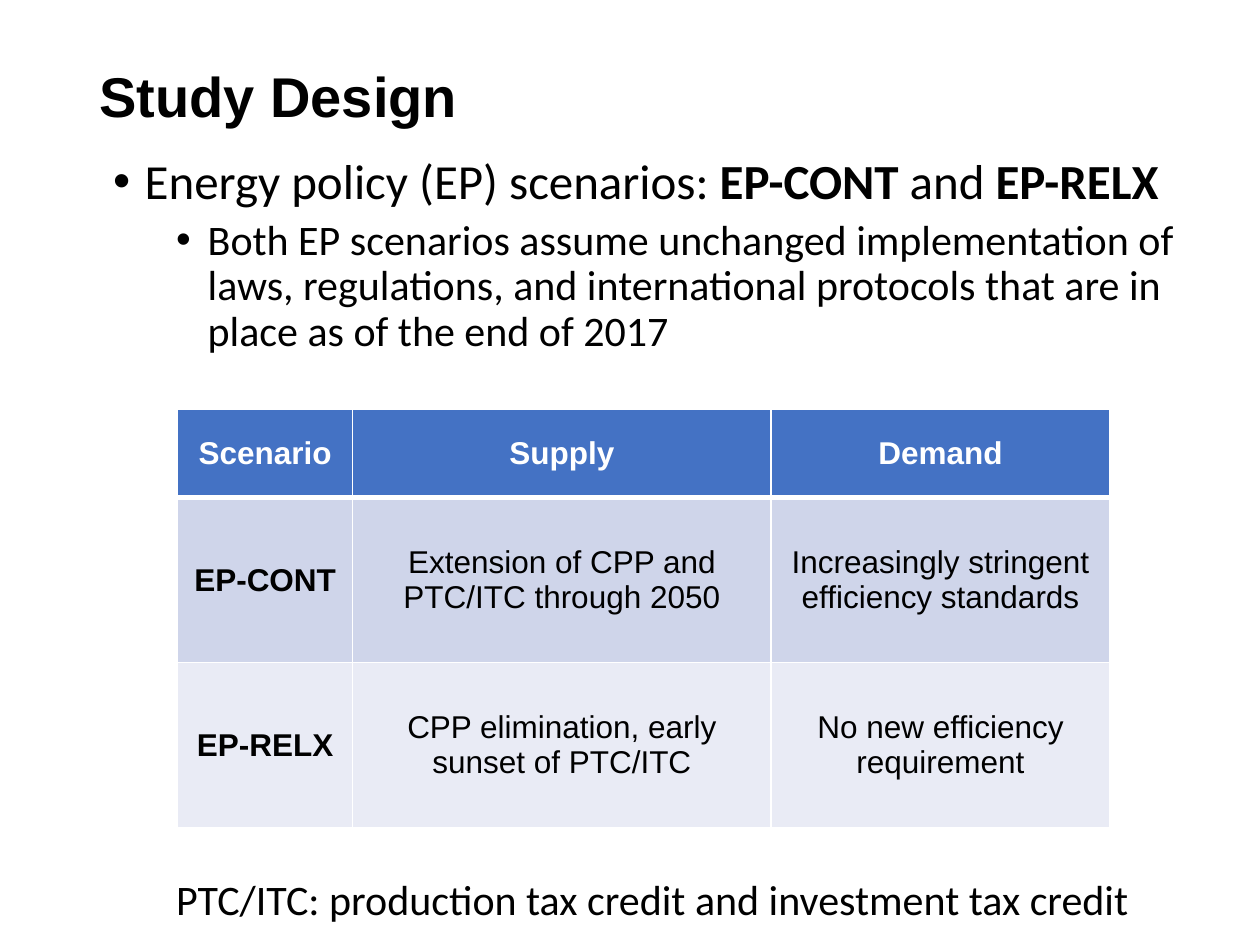
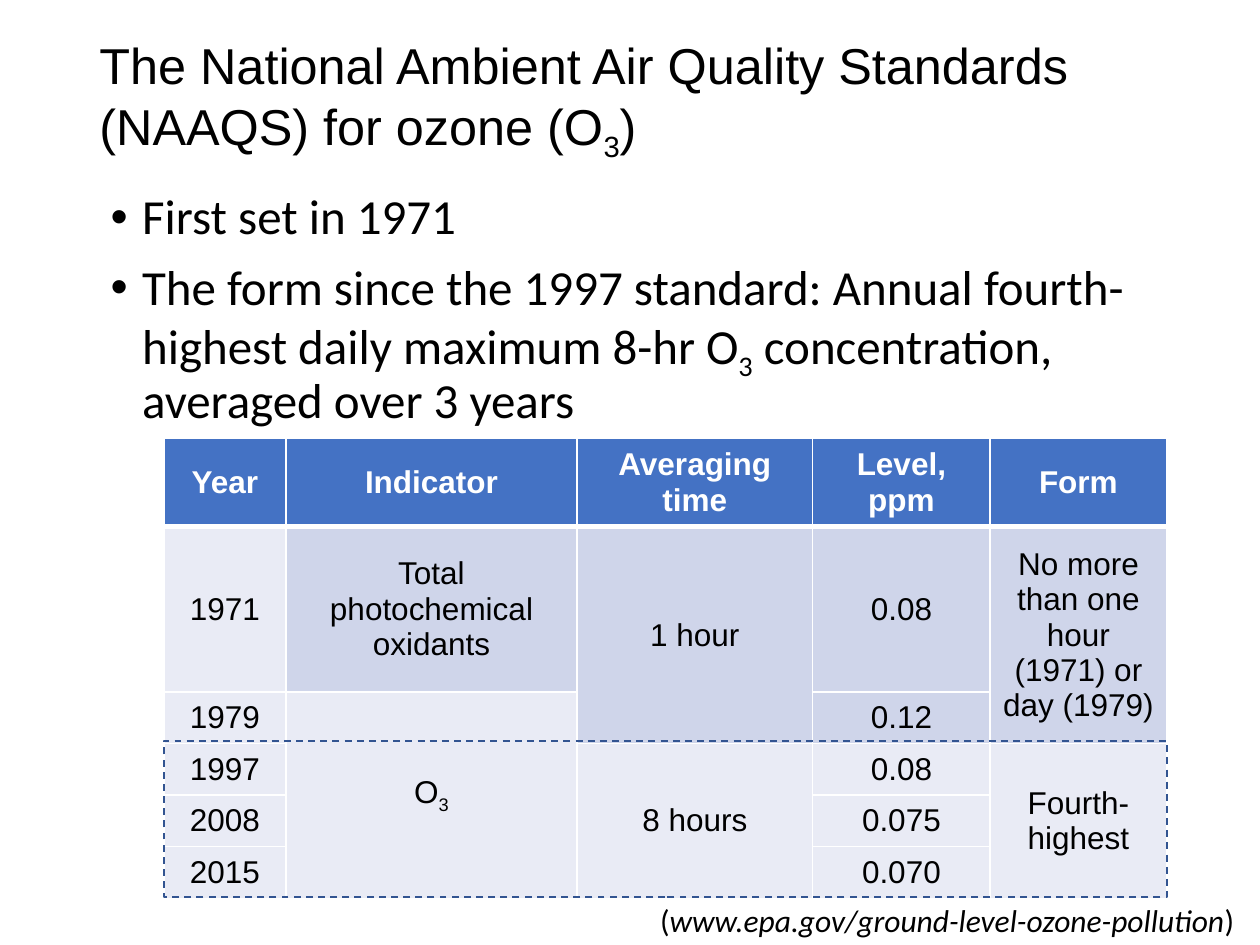
"""Builds two slides on energy policy scenarios and ozone standards."""
import dataclasses

import lxml.etree
import pptx
import pptx.dml.color
import pptx.enum.dml
import pptx.enum.shapes
import pptx.enum.text
import pptx.oxml.ns
import pptx.util

Inches = pptx.util.Inches
Pt = pptx.util.Pt
Align = pptx.enum.text.PP_ALIGN
Anchor = pptx.enum.text.MSO_ANCHOR
qn = pptx.oxml.ns.qn


@dataclasses.dataclass(frozen=True)
class Theme:
    """Colours, fonts and type sizes of both slides."""

    ink: str = "000000"
    white: str = "FFFFFF"
    head: str = "4472C4"
    dark: str = "CFD5EA"
    light: str = "E9EBF5"
    frame: str = "325491"
    sans: str = "Arial"
    text: str = "Calibri"
    title: float = 32
    long: float = 28.8
    body: float = 28
    sub: float = 24
    small: float = 18


LOOK = Theme()
TITLE = (0.69, 0.4, 8.62, 0.78)


def color(code):
    """Turn a hex code into a colour."""
    return pptx.dml.color.RGBColor.from_string(code)


def write(para, parts, face, size, ink=LOOK.ink, bold=False):
    """Fill a paragraph from a string or (text, mark) parts; marks are b, i and s."""
    if isinstance(parts, str):
        parts = [(parts, "")]
    for text, mark in parts:
        run = para.add_run()
        run.text = text
        font = run.font
        font.name, font.size = face, Pt(size)
        font.color.rgb = color(ink)
        font.bold = bold or mark == "b"
        font.italic = mark == "i"
        if mark == "s":
            run._r.get_or_add_rPr().set("baseline", "-25000")


def frame(slide, box):
    """Add a wrapping text box and return its text frame."""
    area = slide.shapes.add_textbox(*map(Inches, box)).text_frame
    area.word_wrap = True
    return area


def title(slide, parts, size, bold=False):
    """Add the slide title."""
    area = frame(slide, TITLE)
    area.vertical_anchor = Anchor.MIDDLE
    para = area.paragraphs[0]
    para.line_spacing = 0.9
    write(para, parts, LOOK.sans, size, bold=bold)


def bullets(slide, box, items):
    """Add a bullet list of (level, parts) items."""
    area = frame(slide, box)
    for rank, (level, parts) in enumerate(items):
        para = area.add_paragraph() if rank else area.paragraphs[0]
        para.level = level
        props = para._p.get_or_add_pPr()
        props.set("marL", str(Inches(0.25 + 0.5 * level)))
        props.set("indent", str(Inches(-0.25)))
        lxml.etree.SubElement(props, qn("a:buFont")).set("typeface", LOOK.sans)
        lxml.etree.SubElement(props, qn("a:buChar")).set("char", "•")
        para.line_spacing = 0.9
        if rank:
            para.space_before = Pt(5 if level else 10)
        write(para, parts, LOOK.text, LOOK.sub if level else LOOK.body)


def note(slide, box, parts, size):
    """Add a caption below the table."""
    write(frame(slide, box).paragraphs[0], parts, LOOK.text, size)


def edges(cell, top, base):
    """Draw white cell borders with the given top and bottom widths."""
    props = cell._tc.get_or_add_tcPr()
    widths = {"a:lnL": 1, "a:lnR": 1, "a:lnT": top, "a:lnB": base}
    for rank, (tag, width) in enumerate(widths.items()):
        line = lxml.etree.Element(qn(tag), w=str(Pt(width)))
        fill = lxml.etree.SubElement(line, qn("a:solidFill"))
        lxml.etree.SubElement(fill, qn("a:srgbClr")).set("val", LOOK.white)
        props.insert(rank, line)


def grid(slide, box, cols, rows, data, shade, spans=(), strong=False):
    """Add a table; shade(row, col) picks the fill, spans are (row, col, last row)."""
    table = slide.shapes.add_table(len(rows), len(cols), *map(Inches, box)).table
    for col, width in zip(table.columns, cols):
        col.width = Inches(width)
    for row, height in zip(table.rows, rows):
        row.height = Inches(height)
    for r, line in enumerate(data):
        for c, parts in enumerate(line):
            cell = table.cell(r, c)
            cell.fill.solid()
            cell.fill.fore_color.rgb = color(LOOK.head if r == 0 else shade(r, c))
            cell.vertical_anchor = Anchor.MIDDLE
            edges(cell, 3 if r == 1 else 1, 3 if r == 0 else 1)
            if parts:
                para = cell.text_frame.paragraphs[0]
                para.alignment = Align.CENTER
                write(para, parts, LOOK.sans, LOOK.small,
                      LOOK.ink if r else LOOK.white, r == 0 or (strong and c == 0))
    for first, col, last in spans:
        table.cell(first, col).merge(table.cell(last, col))


def dashes(slide, box):
    """Add a dashed outline around the current form of the standard."""
    kind = pptx.enum.shapes.MSO_SHAPE.RECTANGLE
    shape = slide.shapes.add_shape(kind, *map(Inches, box))
    shape.shadow.inherit = False
    shape.fill.background()
    shape.line.color.rgb = color(LOOK.frame)
    shape.line.width = Pt(1)
    shape.line.dash_style = pptx.enum.dml.MSO_LINE.DASH


def design(slide):
    """Build the study design slide."""
    bullets(slide, (0.8, 1.2, 8.62, 6.1), [
        (0, [("Energy policy (EP) scenarios: ", ""), ("EP-CONT", "b"),
             (" and ", ""), ("EP-RELX", "b")]),
        (1, "Both EP scenarios assume unchanged implementation of laws, "
            "regulations, and international protocols that are in place "
            "as of the end of 2017"),
    ])
    title(slide, "Study Design", LOOK.title, bold=True)
    data = [
        ("Scenario", "Supply", "Demand"),
        ("EP-CONT", "Extension of CPP and PTC/ITC through 2050",
         "Increasingly stringent efficiency standards"),
        ("EP-RELX", "CPP elimination, early sunset of PTC/ITC",
         "No new efficiency requirement"),
    ]
    grid(slide, (1.41, 3.25, 7.4, 3.32), (1.39, 3.32, 2.69), (0.7, 1.31, 1.31),
         data, lambda r, c: LOOK.dark if r == 1 else LOOK.light, strong=True)
    note(slide, (1.3, 6.88, 8.01, 0.5),
         "PTC/ITC: production tax credit and investment tax credit", LOOK.sub)


def ozone(slide):
    """Build the ozone standards slide."""
    bullets(slide, (0.78, 1.48, 8.48, 4.67), [
        (0, "First set in 1971"),
        (0, [("The form since the 1997 standard: Annual fourth-highest daily "
              "maximum 8-hr O", ""), ("3", "s"),
             (" concentration, averaged over 3 years", "")]),
    ])
    title(slide, [("The National Ambient Air Quality Standards (NAAQS) for "
                   "ozone (O", ""), ("3", "s"), (")", "")], LOOK.long)
    data = [
        ("Year", "Indicator", "Averaging time", "Level, ppm", "Form"),
        ("1971", "Total photochemical oxidants", "1 hour", "0.08",
         "No more than one hour (1971) or day (1979)"),
        ("1979", [("O", ""), ("3", "s")], "", "0.12", ""),
        ("1997", "", "8 hours", "0.08", "Fourth-highest"),
        ("2008", "", "", "0.075", ""),
        ("2015", "", "", "0.070", ""),
    ]

    def shade(r, c):
        """Darken the hourly standards beside the year column."""
        return LOOK.dark if c and (r == 1 or (r == 2 and c > 1)) else LOOK.light

    left, top, width, height = box = (1.3, 3.48, 7.96, 3.64)
    grid(slide, box, (0.97, 2.31, 1.87, 1.41, 1.4), (0.7, 1.31) + (0.41,) * 4,
         data, shade, [(1, 2, 2), (1, 4, 2), (2, 1, 5), (3, 2, 5), (3, 4, 5)])
    dashes(slide, (left, top + 2.4, width, height - 2.4))
    note(slide, (5.14, 7.1, 4.86, 0.4),
         [("(", ""), ("www.epa.gov/ground-level-ozone-pollution", "i"), (")", "")],
         LOOK.small)


def main():
    """Build and save the deck."""
    deck = pptx.Presentation()
    deck.slide_width, deck.slide_height = Inches(10), Inches(7.5)
    for build in (design, ozone):
        build(deck.slides.add_slide(deck.slide_layouts[6]))
    deck.save("out.pptx")


if __name__ == "__main__":
    main()
